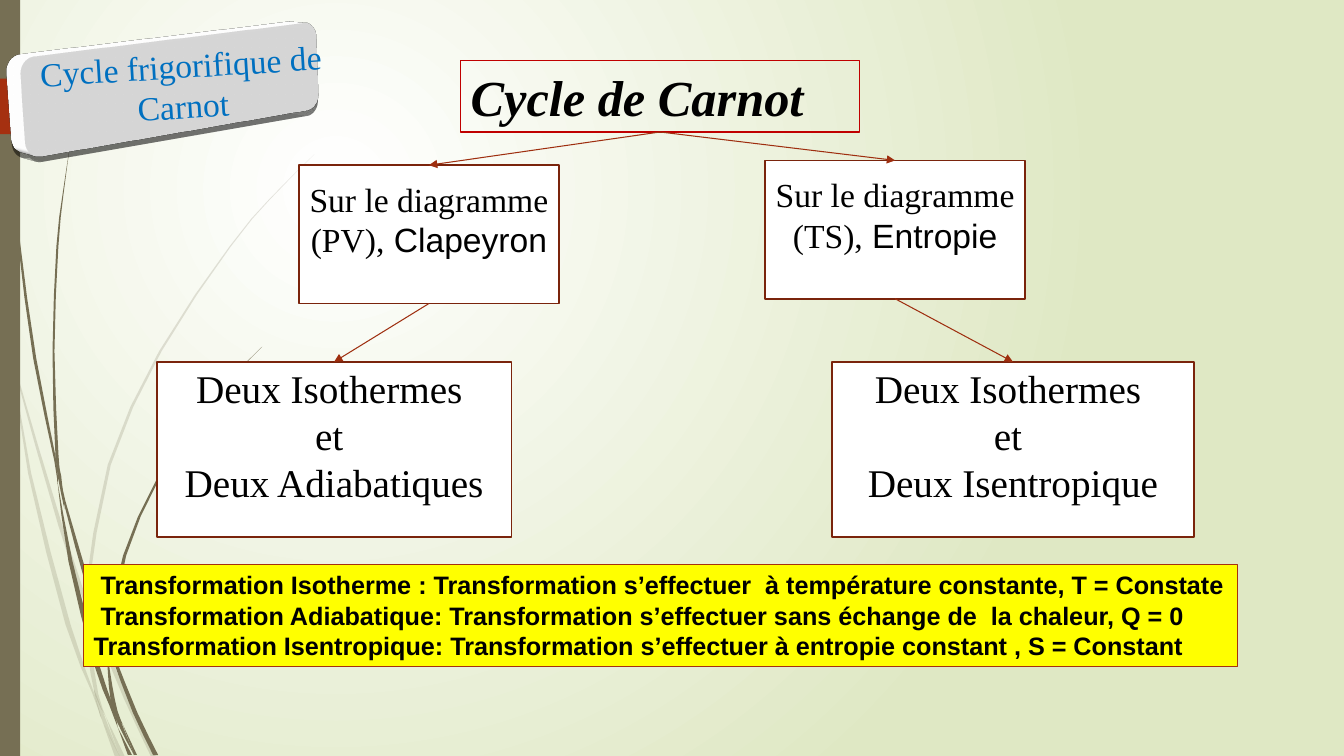
"""Build the slide on the Carnot cycle and its two diagrams."""
from lxml.etree import SubElement
from pptx import Presentation
from pptx.dml.color import RGBColor
from pptx.enum.shapes import MSO_CONNECTOR, MSO_SHAPE
from pptx.enum.text import MSO_ANCHOR, MSO_AUTO_SIZE, PP_ALIGN
from pptx.oxml import parse_xml
from pptx.oxml.ns import nsdecls, qn
from pptx.util import Pt

SERIF, SANS = "Times New Roman", "Arial"
COLORS = {
    "white": "FFFFFF", "sage": "DFE8C4", "olive": "766F54", "rust": "A53010",
    "brown": "7A240C", "arrow": "9E2E0F", "red": "C00000", "yellow": "FFFF00",
    "blue": "0070C0", "black": "000000",
}
TITLE = "Cycle de Carnot"
TITLE_BOX = (329, 43.4, 285, 50.9)
BADGE = "Cycle frigorifique de Carnot"
BADGE_BOX = (2.9, 27.4, 254.2, 67)
BADGE_EFFECTS = [
    """<a:effectLst {ns}><a:outerShdw blurRad="225425" dist="50800" dir="5220000" algn="ctr">
    <a:srgbClr val="000000"><a:alpha val="33000"/></a:srgbClr></a:outerShdw></a:effectLst>""",
    """<a:scene3d {ns}><a:camera prst="perspectiveFront" fov="3300000">
    <a:rot lat="486000" lon="19530000" rev="174000"/></a:camera>
    <a:lightRig rig="harsh" dir="t"><a:rot lat="0" lon="0" rev="3000000"/></a:lightRig>
    </a:scene3d>""",
    """<a:sp3d {ns} extrusionH="254000" contourW="19050">
    <a:bevelT w="82550" h="44450" prst="angle"/><a:bevelB w="82550" h="44450" prst="angle"/>
    <a:contourClr><a:srgbClr val="FFFFFF"/></a:contourClr></a:sp3d>""",
]
BRANCHES = [
    {"diagram": [("Sur le diagramme (PV),", SERIF), (" Clapeyron", SANS)],
     "diagram_box": (213.4, 118, 186, 98.8),
     "steps": ["Deux Isothermes ", "et ", "Deux Adiabatiques"],
     "steps_box": (111.9, 258.5, 253.5, 125.2)},
    {"diagram": [("Sur le diagramme (TS),", SERIF), (" Entropie", SANS)],
     "diagram_box": (546.4, 114.6, 186, 98.8),
     "steps": ["Deux Isothermes ", "et ", "Deux Isentropique"],
     "steps_box": (594.2, 258.5, 258.7, 125.2)},
]
DEFINITIONS = [
    " Transformation Isotherme : Transformation s’effectuer  à température constante, T = Constate",
    " Transformation Adiabatique: Transformation s’effectuer sans échange de  la chaleur, Q = 0",
    "Transformation Isentropique: Transformation s’effectuer à entropie constant , S = Constant",
]
DEFINITIONS_BOX = (59.8, 403.4, 824, 72.7)
PALE_STEMS = [
    [(0, 203, 0), (3.8, 226, 2.4), (8, 252, 0)],
    [(10, 248.4, 0), (12, 268, 1), (43, 375, 2.9), (59.5, 425, 2.5), (60.5, 431, 0)],
    [(63.4, 429, 0), (65, 438, 2.5), (90, 499, 3), (109.8, 540.7, 3.6)],
    [(75.6, 512, 0), (87.5, 540.7, 3.6)],
    [(8, 252, 0), (21.2, 338, 2.2), (48.6, 446, 3.6), (66.6, 495, 1.4), (72.7, 514, 0)],
    [(60.5, 431, 0), (64, 465, 2.9), (69, 496, 2.5), (75.6, 512, 0)],
    [(224.6, 110.2, 0), (193, 142, 0.7), (164.5, 176, 1), (114.5, 251, 1.8),
     (78.1, 332, 2.2), (62.3, 420, 2.2), (63.4, 429, 0)],
    [(72.7, 514, 0), (83.9, 540.7, 3.6)],
    [(61.2, 422, 0), (61.9, 431, 2.5), (63.4, 439, 0)],
    [(67, 492, 0), (73, 511, 3), (85.7, 540.7, 0)],
]
DARK_STEMS = [
    [(2.5, 0, 0.7), (3.9, 35, 0.7), (5.4, 79, 1), (13, 168, 1.4), (24.8, 256, 2.2),
     (39.5, 329, 1.5), (41, 346, 0)],
    [(43.2, 340, 0), (46, 358, 1.5), (65.2, 426, 3.2), (75.8, 459, 1), (76.3, 464.4, 0)],
    [(79.2, 461.5, 0), (81, 469, 2.2), (96.5, 509, 3.2), (111.2, 539.3, 3.6)],
    [(41, 343.4, 0), (50.4, 401, 2.9), (68.8, 474, 3.6), (79.5, 504, 2.5), (84.2, 519.8, 0)],
    [(50.4, 101.5, 0), (45, 139, 0.7), (41, 176, 1.4), (38.2, 251, 1.4),
     (40.7, 325, 2.2), (43.2, 340, 0)],
    [(87.8, 517.7, 0), (96.8, 539.3, 2.2)],
    [(39.6, 323.3, 0), (42.5, 340, 2.5), (46, 363.6, 0)],
    [(187.2, 247.7, 0), (166.3, 269, 0.7), (147.2, 292, 0.9), (113, 342, 1.6),
     (89, 397, 2.2), (78.1, 455, 3), (79.2, 461.5, 0)],
    [(84.2, 519.8, 0), (92.8, 539.3, 2.9)],
    [(76.3, 464.4, 0), (79, 490, 2.5), (82.5, 508, 3), (87.8, 517.7, 0)],
    [(79.2, 497.5, 0), (84.8, 515, 3), (95.8, 539.3, 0)],
]


def rgb(name):
    return RGBColor.from_string(COLORS[name])


def write_text(shape, paragraphs, size, color="black", font=SERIF, bold=False, italic=False,
               align=PP_ALIGN.CENTER, anchor=MSO_ANCHOR.MIDDLE, bottom=3.6):
    frame = shape.text_frame
    frame.word_wrap = True
    frame.auto_size = MSO_AUTO_SIZE.NONE
    frame.vertical_anchor = anchor
    frame.margin_left = frame.margin_right = Pt(7.2)
    frame.margin_top, frame.margin_bottom = Pt(3.6), Pt(bottom)
    for index, content in enumerate(paragraphs):
        paragraph = frame.add_paragraph() if index else frame.paragraphs[0]
        paragraph.alignment = align
        paragraph.line_spacing = 1
        paragraph.space_before = Pt(0)
        for text, face in [(content, font)] if isinstance(content, str) else content:
            run = paragraph.add_run()
            run.text = text
            run.font.name, run.font.size = face, Pt(size)
            run.font.bold, run.font.italic = bold, italic
            run.font.color.rgb = rgb(color)


def style(shape, fill, line=None, width=0.75, alpha=None):
    shape.shadow.inherit = False
    shape.fill.solid()
    shape.fill.fore_color.rgb = rgb(fill)
    if alpha:
        color = shape._element.spPr.find(".//" + qn("a:srgbClr"))
        SubElement(color, qn("a:alpha"), val=str(alpha * 1000))
    if line:
        shape.line.color.rgb = rgb(line)
        shape.line.width = Pt(width)
    else:
        shape.line.fill.background()
    return shape


def add_box(slide, box, fill, line=None, width=0.75, preset=MSO_SHAPE.RECTANGLE):
    shape = slide.shapes.add_shape(preset, *map(Pt, box))
    return style(shape, fill, line, width)


def smooth(knots, steps=2):
    padded = [knots[0], *knots, knots[-1]]
    result = []
    for a, b, c, d in zip(padded, padded[1:], padded[2:], padded[3:]):
        for step in range(steps):
            t = step / steps
            result.append([
                q + t * (r - p) / 2 + t * t * (2 * p - 5 * q + 4 * r - s) / 2
                + t ** 3 * (3 * q - p - 3 * r + s) / 2 for p, q, r, s in zip(a, b, c, d)])
    return result + [knots[-1]]


def add_stem(slide, knots, alpha=None):
    curve = smooth(knots)
    left = [(Pt(x - width / 2), Pt(y)) for x, y, width in curve]
    right = [(Pt(x + width / 2), Pt(y)) for x, y, width in reversed(curve)]
    builder = slide.shapes.build_freeform(*left[0])
    builder.add_line_segments(left[1:] + right, close=True)
    style(builder.convert_to_shape(), "olive", alpha=alpha)


def add_badge(slide):
    badge = add_box(slide, BADGE_BOX, "white", preset=MSO_SHAPE.ROUNDED_RECTANGLE)
    properties = badge._element.spPr
    properties.remove(properties.find(qn("a:effectLst")))
    for effect in BADGE_EFFECTS:
        properties.append(parse_xml(effect.format(ns=nsdecls("a"))))
    write_text(badge, [BADGE], 24, color="blue")


def add_arrow(slide, start, end):
    arrow = slide.shapes.add_connector(MSO_CONNECTOR.STRAIGHT, 0, 0, 0, 0)
    arrow.begin_connect(start, 2)
    arrow.end_connect(end, 0)
    arrow.line.color.rgb = rgb("arrow")
    arrow.line.width = Pt(0.75)
    SubElement(arrow.line._get_or_add_ln(), qn("a:tailEnd"), type="triangle")
    SubElement(arrow._element.spPr, qn("a:effectLst"))


def paint_background(slide):
    fill = slide.background.fill
    fill.gradient()
    for stop, name in zip(fill.gradient_stops, ("white", "sage")):
        stop.color.rgb = rgb(name)
    gradient = slide._element.find(".//" + qn("a:gradFill"))
    gradient.remove(gradient.find(qn("a:lin")))
    circle = SubElement(gradient, qn("a:path"), path="circle")
    SubElement(circle, qn("a:fillToRect"), l="50000", t="50000", r="100000", b="100000")


def main():
    presentation = Presentation()
    presentation.slide_width, presentation.slide_height = Pt(960), Pt(540)
    slide = presentation.slides.add_slide(presentation.slide_layouts[5])
    paint_background(slide)
    for stems, alpha in ((PALE_STEMS, 20), (DARK_STEMS, None)):
        for knots in stems:
            add_stem(slide, knots, alpha)
    add_box(slide, (0, 0, 14.4, 540), "olive")
    add_box(slide, (0, 56.2, 125.3, 39.6), "rust", preset=MSO_SHAPE.PENTAGON)
    add_badge(slide)

    title = slide.shapes.title
    title.left, title.top, title.width, title.height = map(Pt, TITLE_BOX)
    title.line.color.rgb = rgb("red")
    title.line.width = Pt(0.75)
    write_text(title, [TITLE], 36, bold=True, italic=True, align=PP_ALIGN.LEFT,
               anchor=MSO_ANCHOR.TOP)
    definitions = add_box(slide, DEFINITIONS_BOX, "yellow", "rust")
    write_text(definitions, DEFINITIONS, 18, font=SANS, bold=True, align=PP_ALIGN.LEFT,
               anchor=MSO_ANCHOR.TOP)
    for branch in BRANCHES:
        diagram = add_box(slide, branch["diagram_box"], "white", "brown", 1.25)
        write_text(diagram, [branch["diagram"]], 24, bottom=25)
        steps = add_box(slide, branch["steps_box"], "white", "brown", 1.25)
        write_text(steps, branch["steps"], 28, bottom=25)
        add_arrow(slide, title, diagram)
        add_arrow(slide, diagram, steps)
    presentation.save("out.pptx")


if __name__ == "__main__":
    main()
